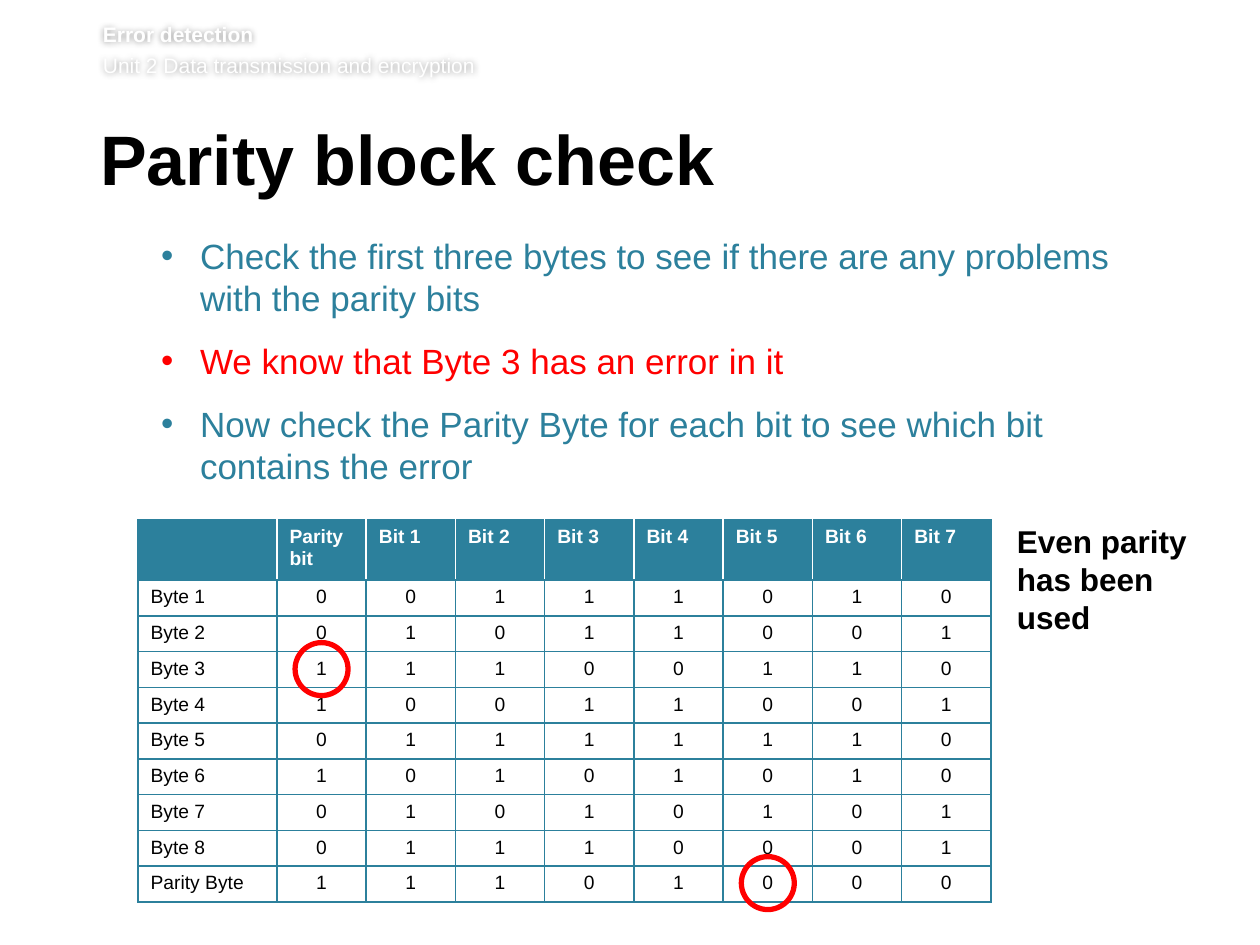
from lxml import etree
from pptx import Presentation
from pptx import util as u
from pptx.dml.color import RGBColor
from pptx.enum import shapes, text
from pptx.oxml import ns

TEAL = RGBColor(0x2C, 0x80, 0x9C)
RED = RGBColor(0xFF, 0x00, 0x00)
BLACK = RGBColor(0x00, 0x00, 0x00)
WHITE = RGBColor(0xFF, 0xFF, 0xFF)

PX_PER_INCH = 126
LABEL_WIDTH = 139
HEAD_HEIGHT = 60
RING_SIZE = 53

HEADINGS = ["", "Parity bit"] + [f"Bit {n}" for n in range(1, 8)]
BYTES = ["00111010", "01011001", "11100110", "10011001", "01111110",
         "10101010", "01010101", "01110001", "11101000"]
LABELS = [f"Byte {n}" for n in range(1, 9)] + ["Parity Byte"]
POINTS = [
    ("Check the first three bytes to see if there are any problems with the parity bits", TEAL),
    ("We know that Byte 3 has an error in it", RED),
    ("Now check the Parity Byte for each bit to see which bit contains the error", TEAL),
]


def px(length):
    return u.Emu(round(length * 914400 / PX_PER_INCH))


def add(parent, tag, **attributes):
    return etree.SubElement(parent, ns.qn(tag), attributes)


def style(paragraph, size, color, bold=False):
    for run in paragraph.runs:
        run.font.name = "Arial"
        run.font.size = u.Pt(size)
        run.font.bold = bold
        run.font.color.rgb = color


def text_area(slide, box, lines):
    area = slide.shapes.add_textbox(*map(px, box))
    frame = area.text_frame
    frame.word_wrap = True
    frame.margin_left = frame.margin_top = frame.margin_right = frame.margin_bottom = 0
    frame.text = "\n".join(lines)
    return area


def running_header(slide, box):
    header = text_area(slide, box, ["Error detection", "Unit 2 Data transmission and encryption"])
    unit, topic = header.text_frame.paragraphs
    style(unit, 12, WHITE, bold=True)
    style(topic, 12, WHITE)
    topic.space_before = u.Pt(2.9)
    effects = add(header._element.spPr, "a:effectLst")
    shadow = add(effects, "a:outerShdw", blurRad="50800", dist="0", dir="0", algn="ctr", rotWithShape="0")
    shade = add(shadow, "a:srgbClr", val=str(BLACK))
    add(shade, "a:alpha", val="40000")


def title(slide, box):
    heading = text_area(slide, box, ["Parity block check"])
    heading.text_frame.margin_top = px(6)
    line = heading.text_frame.paragraphs[0]
    line.line_spacing = u.Pt(39)
    style(line, 40, BLACK, bold=True)


def bullet_list(slide, box):
    points = text_area(slide, box, [wording for wording, _ in POINTS])
    points.text_frame.margin_right = px(13)
    for point, (_, color) in zip(points.text_frame.paragraphs, POINTS):
        properties = point._p.get_or_add_pPr()
        properties.set("marL", str(px(100)))
        properties.set("indent", str(px(-39)))
        add(properties, "a:buFont", typeface="Arial")
        add(properties, "a:buChar", char="•")
        point.space_after = u.Pt(12)
        style(point, 20, color)


def parity_note(slide, box):
    note = text_area(slide, box, ["Even parity has been used"])
    style(note.text_frame.paragraphs[0], 18, BLACK, bold=True)


def set_borders(cell, left, right):
    properties = cell._tc.get_or_add_tcPr()
    for tag, color in zip(("a:lnL", "a:lnR", "a:lnT", "a:lnB"), (left, right, TEAL, TEAL)):
        line = add(properties, tag, w=str(u.Pt(1)))
        add(add(line, "a:solidFill"), "a:srgbClr", val=str(color))


def parity_table(slide, box):
    rows = [HEADINGS] + [[label, *bits] for label, bits in zip(LABELS, BYTES)]
    last = len(HEADINGS) - 1
    table = slide.shapes.add_table(len(rows), len(HEADINGS), *map(px, box)).table
    table.horz_banding = False
    bit_width = (box[2] - LABEL_WIDTH) / last
    byte_height = (box[3] - HEAD_HEIGHT) / len(BYTES)
    for index, column in enumerate(table.columns):
        column.width = px(bit_width if index else LABEL_WIDTH)
    for index, row in enumerate(table.rows):
        row.height = px(byte_height if index else HEAD_HEIGHT)

    for r, values in enumerate(rows):
        for c, value in enumerate(values):
            cell = table.cell(r, c)
            cell.text_frame.text = value
            entry = cell.text_frame.paragraphs[0]
            if r == 0:
                set_borders(cell, WHITE if c else TEAL, WHITE if c < last else TEAL)
                cell.fill.solid()
                cell.fill.fore_color.rgb = TEAL
                style(entry, 11, WHITE, bold=True)
            else:
                set_borders(cell, TEAL, TEAL)
                cell.fill.background()
                style(entry, 11, BLACK)
                if c:
                    entry.alignment = text.PP_ALIGN.CENTER

    for byte, bit in ((9, 5), (3, 0)):
        center_x = box[0] + LABEL_WIDTH + (bit + 0.5) * bit_width
        center_y = box[1] + HEAD_HEIGHT + (byte - 0.5) * byte_height
        ring = slide.shapes.add_shape(
            shapes.MSO_SHAPE.OVAL, px(center_x - RING_SIZE / 2),
            px(center_y - RING_SIZE / 2), px(RING_SIZE), px(RING_SIZE))
        ring.shadow.inherit = False
        ring.fill.background()
        ring.line.color.rgb = RED
        ring.line.width = u.Pt(3)


def main():
    deck = Presentation()
    deck.slide_width, deck.slide_height = px(1260), px(945)
    slide = deck.slides.add_slide(deck.slide_layouts[6])
    running_header(slide, (103, 22, 1111, 62))
    title(slide, (100, 125, 1077, 92))
    bullet_list(slide, (100, 235, 1075, 476))
    parity_note(slide, (1017, 522, 179, 115))
    parity_table(slide, (138, 520, 853, 381))
    deck.save("out.pptx")


if __name__ == "__main__":
    main()
